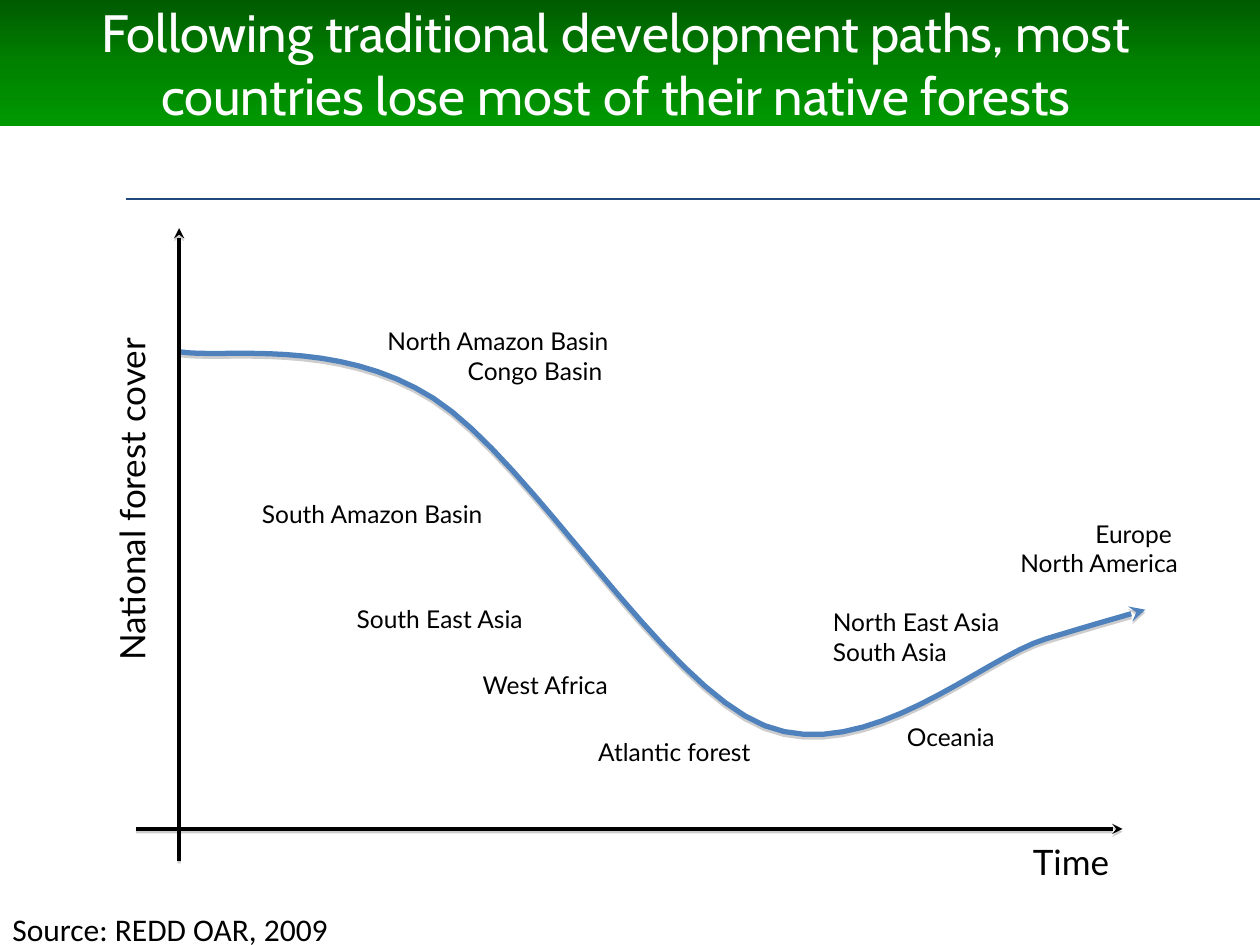
"""Build a slide that sketches the forest transition curve."""
from copy import deepcopy

from lxml.etree import SubElement
from pptx import Presentation
from pptx.dml.color import RGBColor
from pptx.enum.shapes import MSO_CONNECTOR as Connector, MSO_SHAPE as Shape
from pptx.enum.text import MSO_ANCHOR as Anchor, PP_ALIGN as Align
from pptx.oxml.ns import qn
from pptx.util import Cm, Pt

BLACK = RGBColor(0x00, 0x00, 0x00)
WHITE = RGBColor(0xFF, 0xFF, 0xFF)
GRAY = RGBColor(0x80, 0x80, 0x80)
NAVY = RGBColor(0x1F, 0x49, 0x7D)
BLUE = RGBColor(0x4F, 0x81, 0xBD)
GREENS = (RGBColor(0x00, 0x5B, 0x00), RGBColor(0x00, 0x81, 0x00), RGBColor(0x00, 0x99, 0x00))

REGIONS = (
    (5.94, 6.48, 6.53, 1.4, ("North Amazon Basin", "Congo Basin "), Align.RIGHT),
    (5.08, 9.96, 7.95, 0.79, ("South Amazon Basin",), Align.LEFT),
    (16.69, 10.36, 7.26, 1.4, ("Europe ", "North America"), Align.RIGHT),
    (16.59, 12.14, 4.39, 1.4, ("North East Asia", "South Asia"), Align.LEFT),
    (11.86, 14.76, 4.85, 1.12, ("Atlantic forest",), Align.LEFT),
    (6.99, 12.07, 6.2, 0.79, ("South East Asia",), Align.LEFT),
    (18.08, 14.45, 2.9, 1.12, ("Oceania",), Align.LEFT),
    (9.53, 13.41, 4.55, 0.79, ("West Africa",), Align.LEFT),
)
CURVE_START = (3.61, 7.09)
CURVE_SEGMENTS = (
    ((4.47, 7.24), (6.78, 6.78), (8.74, 8.03)),
    ((10.72, 9.3), (13.36, 13.82), (15.42, 14.63)),
    ((17.48, 15.44), (19.81, 13.26), (21.08, 12.88)),
    ((22.35, 12.5), (21.95, 12.62), (23.09, 12.29)),
)
STEPS = 16


def add_shadow(properties, color, alpha, distance, degrees):
    """Append an effect list holding one outer shadow."""
    effects = SubElement(properties, qn("a:effectLst"))
    shadow = SubElement(effects, qn("a:outerShdw"), blurRad="0", dist=str(Pt(distance)),
                        dir=str(degrees * 60000), rotWithShape="0")
    shade = SubElement(shadow, qn("a:srgbClr"), val=str(color))
    SubElement(shade, qn("a:alpha"), val=str(alpha * 1000))


def style_line(shape, color, width, arrow_end=None):
    """Color a line; one with an arrowhead also casts a soft shadow."""
    shape.line.color.rgb = color
    shape.line.width = Pt(width)
    properties = shape._element.spPr
    if arrow_end:
        SubElement(properties.find(qn("a:ln")), qn(arrow_end), type="stealth")
        add_shadow(properties, GRAY, 38, 1.6, 90)
    else:
        SubElement(properties, qn("a:effectLst"))


def add_line(slide, start, end, color, width, arrow_end=None):
    """Add a straight line between two points in centimetres."""
    line = slide.shapes.add_connector(Connector.STRAIGHT, *map(Cm, start + end))
    style_line(line, color, width, arrow_end)


def add_label(slide, box, lines, size, align=Align.LEFT, font="Lato", color=BLACK,
              insets=(0.2, 0.1)):
    """Add a wrapped text box with one paragraph per line."""
    shape = slide.shapes.add_textbox(*map(Cm, box))
    frame = shape.text_frame
    frame.word_wrap = True
    frame.margin_left = frame.margin_right = Cm(insets[0])
    frame.margin_top = frame.margin_bottom = Cm(insets[1])
    frame.text = "\n".join(lines)
    for paragraph in frame.paragraphs:
        paragraph.alignment = align
        paragraph.font.size = Pt(size)
        paragraph.font.name = font
        paragraph.font.color.rgb = color
    return shape


def add_banner(slide):
    """Add the green gradient band and the title on it."""
    band = slide.shapes.add_shape(Shape.RECTANGLE, 0, 0, Cm(25.4), Cm(2.54))
    band.shadow.inherit = False
    band.line.fill.background()
    band.fill.gradient()
    band.fill.gradient_angle = 270
    stop_list = band._element.spPr.find(".//" + qn("a:gsLst"))
    stop_list.insert(1, deepcopy(stop_list[0]))
    for index, (stop, color) in enumerate(zip(band.fill.gradient_stops, GREENS)):
        stop.position = index / 2
        stop.color.rgb = color
    title = add_label(
        slide, (0.43, 0, 23.98, 2.54),
        ("Following traditional development paths, most countries lose most of their native forests",),
        30, Align.CENTER, "Cabin", WHITE, (0.25, 0.13))
    title.text_frame.vertical_anchor = Anchor.MIDDLE
    run = title.text_frame.paragraphs[0].runs[0]
    run.font.color.rgb = WHITE
    add_shadow(run._r.get_or_add_rPr(), BLACK, 50, 2, 45)


def bezier_point(points, t):
    """Return the point at t on a cubic curve, in EMU."""
    weights = ((1 - t) ** 3, 3 * t * (1 - t) ** 2, 3 * t ** 2 * (1 - t), t ** 3)
    return tuple(Cm(sum(w * c for w, c in zip(weights, axis))) for axis in zip(*points))


def add_curve(slide):
    """Add the forest cover curve with its arrowhead."""
    builder = slide.shapes.build_freeform(*map(Cm, CURVE_START))
    start = CURVE_START
    for segment in CURVE_SEGMENTS:
        points = (start, *segment)
        builder.add_line_segments(
            [bezier_point(points, step / STEPS) for step in range(1, STEPS + 1)], close=False)
        start = segment[-1]
    curve = builder.convert_to_shape()
    curve.fill.background()
    style_line(curve, BLUE, 3, "a:tailEnd")


def main():
    """Build and save the slide."""
    presentation = Presentation()
    presentation.slide_width, presentation.slide_height = Cm(25.4), Cm(19.05)
    slide = presentation.slides.add_slide(presentation.slide_layouts[6])
    add_banner(slide)
    add_line(slide, (22.63, 16.71), (2.74, 16.71), BLACK, 2, "a:headEnd")
    for *box, lines, align in REGIONS:
        add_label(slide, box, lines, 14, align)
    add_label(slide, (18.95, 16.84, 3.61, 0.94), ("Time",), 20, Align.RIGHT)
    cover = add_label(slide, (-1.24, 9.98, 7.77, 1.04), ("National forest cover",), 20, Align.RIGHT)
    cover.rotation = 270
    add_curve(slide)
    add_line(slide, (2.54, 4.01), (25.4, 4.01), NAVY, 0.75)
    add_line(slide, (3.61, 4.6), (3.61, 17.35), BLACK, 2, "a:headEnd")
    add_label(slide, (0, 18.21, 9.96, 1.02), ("Source: REDD OAR, 2009",), 18,
              font="Calibri", insets=(0.25, 0.13))
    presentation.save("out.pptx")


if __name__ == "__main__":
    main()
